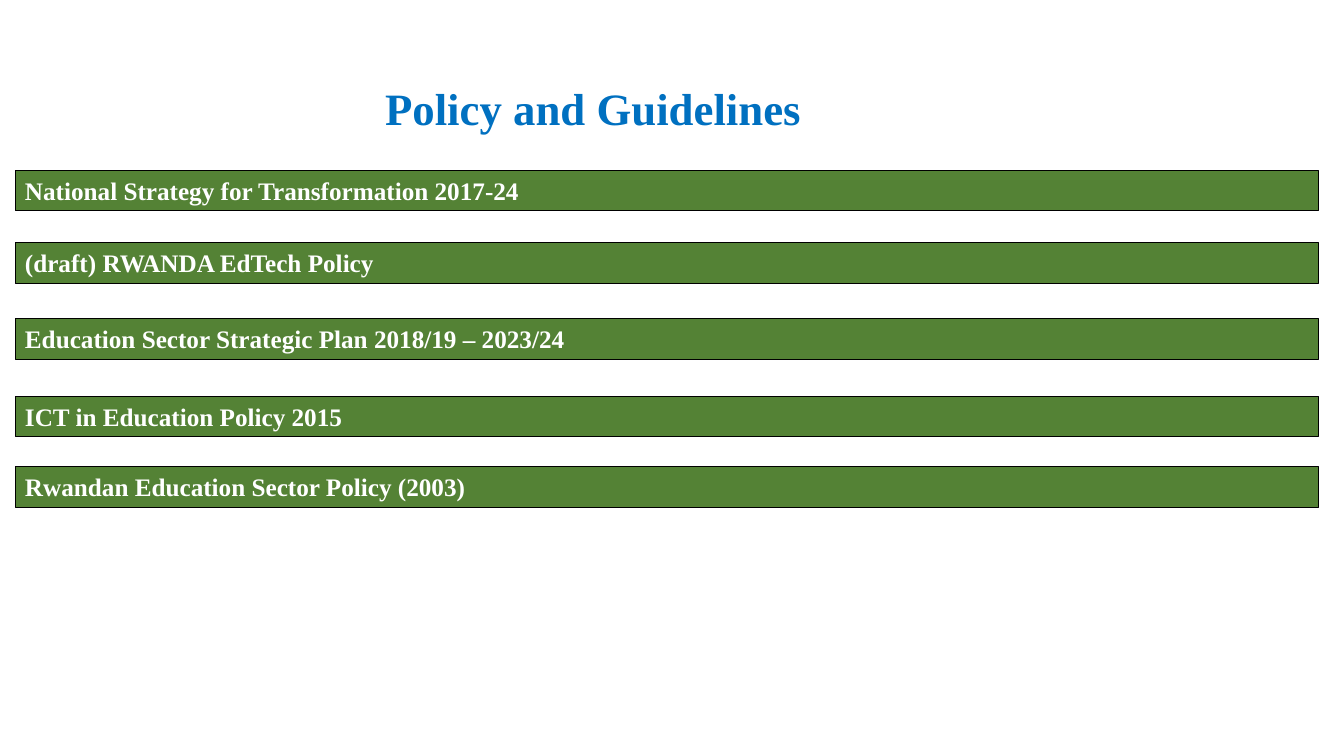
from dataclasses import dataclass

import pptx
import pptx.dml.color
import pptx.enum.shapes
import pptx.enum.text
import pptx.util
from pptx.util import Cm


@dataclass(frozen=True)
class Theme:
    font: str = "Times New Roman"
    title_color: str = "0070C0"
    bar_fill: str = "548235"
    bar_line: str = "000000"
    bar_text: str = "FFFFFF"
    title_size: float = 32
    bar_size: float = 18
    line_width: float = 0.75


THEME = Theme()

POLICIES = [
    (4.29, "National Strategy for Transformation 2017-24"),
    (6.12, "(draft) RWANDA EdTech Policy"),
    (8.03, "Education Sector Strategic Plan 2018/19 – 2023/24"),
    (9.98, "ICT in Education Policy 2015"),
    (11.76, "Rwandan Education Sector Policy (2003)"),
]


def rgb(value):
    return pptx.dml.color.RGBColor.from_string(value)


def write(holder, wording, size, color, alignment, anchor):
    frame = holder.text_frame
    frame.word_wrap = True
    frame.vertical_anchor = anchor
    frame.text = wording
    line = frame.paragraphs[0]
    line.alignment = alignment
    font = line.runs[0].font
    font.name = THEME.font
    font.size = pptx.util.Pt(size)
    font.bold = True
    font.color.rgb = rgb(color)


def add_title(slide, wording):
    title = slide.shapes.add_textbox(Cm(0.79), Cm(0.33), Cm(28.32), Cm(3.18))
    write(title, wording, THEME.title_size, THEME.title_color,
          pptx.enum.text.PP_ALIGN.CENTER, pptx.enum.text.MSO_ANCHOR.BOTTOM)


def add_policy_bar(slide, top, wording):
    bar = slide.shapes.add_shape(
        pptx.enum.shapes.MSO_SHAPE.RECTANGLE,
        Cm(0.38), Cm(top), Cm(32.84), Cm(1.02))
    bar.shadow.inherit = False
    bar.fill.solid()
    bar.fill.fore_color.rgb = rgb(THEME.bar_fill)
    bar.line.color.rgb = rgb(THEME.bar_line)
    bar.line.width = pptx.util.Pt(THEME.line_width)
    write(bar, wording, THEME.bar_size, THEME.bar_text,
          pptx.enum.text.PP_ALIGN.LEFT, pptx.enum.text.MSO_ANCHOR.TOP)


def main():
    deck = pptx.Presentation()
    deck.slide_width = Cm(33.87)
    deck.slide_height = Cm(19.05)
    slide = deck.slides.add_slide(deck.slide_layouts[6])
    add_title(slide, "Policy and Guidelines")
    for top, policy in POLICIES:
        add_policy_bar(slide, top, policy)
    deck.save("out.pptx")


if __name__ == "__main__":
    main()
